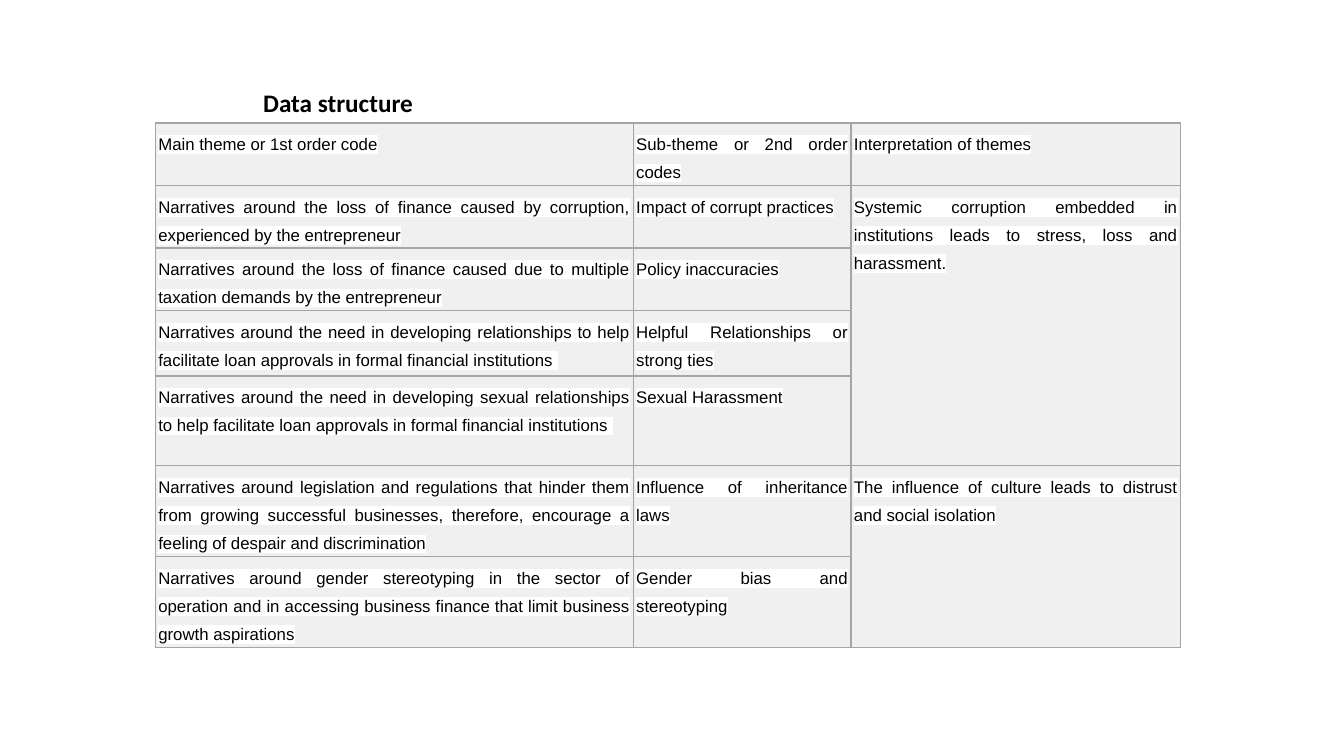
from lxml import etree
from pptx import Presentation
from pptx.dml.color import RGBColor
from pptx.enum.text import MSO_ANCHOR, MSO_AUTO_SIZE, PP_ALIGN
from pptx.oxml.ns import qn
from pptx.util import Inches, Pt

LEFT, JUSTIFY = PP_ALIGN.LEFT, PP_ALIGN.JUSTIFY
MIDDLE = MSO_ANCHOR.MIDDLE
NO_AUTOFIT = MSO_AUTO_SIZE.NONE

BLACK = RGBColor(0x00, 0x00, 0x00)
WHITE = RGBColor(0xFF, 0xFF, 0xFF)
CELL_GREY = RGBColor(0xF0, 0xF0, 0xF0)
BORDER_GREY = RGBColor(0xA5, 0xA5, 0xA5)

TITLE_ONLY = 5
TITLE_BOX = (2.51, 0.82, 9.38, 0.4)
TABLE_BOX = (1.54, 1.22, 10.17, 5.26)
COLUMN_WIDTHS = (4.74, 2.16, 3.27)
ROW_HEIGHTS = (0.52, 0.52, 0.52, 0.65, 0.89, 0.89, 0.77)
CELL_MARGIN = 0.03

THEMES = [
    ("Main theme or 1st order code",
     "Sub-theme or 2nd order codes",
     "Interpretation of themes"),
    ("Narratives around the loss of finance caused by corruption, "
     "experienced by the entrepreneur",
     "Impact of corrupt practices",
     "Systemic corruption embedded in institutions leads to stress, "
     "loss and harassment."),
    ("Narratives around the loss of finance caused due to multiple "
     "taxation demands by the entrepreneur",
     "Policy inaccuracies", None),
    ("Narratives around the need in developing relationships to help "
     "facilitate loan approvals in formal financial institutions ",
     "Helpful Relationships or strong ties", None),
    ("Narratives around the need in developing sexual relationships to help "
     "facilitate loan approvals in formal financial institutions ",
     "Sexual Harassment", None),
    ("Narratives around legislation and regulations that hinder them from "
     "growing successful businesses, therefore, encourage a feeling of "
     "despair and discrimination",
     "Influence of inheritance laws",
     "The influence of culture leads to distrust and social isolation"),
    ("Narratives around gender stereotyping in the sector of operation and "
     "in accessing business finance that limit business growth aspirations",
     "Gender bias and stereotyping", None),
]
INTERPRETATION_COLUMN = 2
MERGED_ROWS = [(1, 4), (5, 6)]


def set_font(para, name, size, bold=False):
    para.font.name = name
    para.font.size = Pt(size)
    para.font.bold = bold
    para.font.color.rgb = BLACK


def add_title(page, text):
    title = page.shapes.title
    title.left, title.top, title.width, title.height = map(Inches, TITLE_BOX)
    frame = title.text_frame
    frame.text = text
    frame.auto_size = NO_AUTOFIT
    frame.vertical_anchor = MIDDLE
    para = frame.paragraphs[0]
    para.alignment = LEFT
    set_font(para, "Calibri", 18, bold=True)


def add_color(parent, color):
    etree.SubElement(parent, qn("a:srgbClr"), val=str(color))


def set_borders(cell):
    properties = cell._tc.get_or_add_tcPr()
    for side in ("a:lnL", "a:lnR", "a:lnT", "a:lnB"):
        line = etree.SubElement(properties, qn(side), w=str(Pt(1)))
        add_color(etree.SubElement(line, qn("a:solidFill")), BORDER_GREY)


def highlight(span):
    properties = span._r.get_or_add_rPr()
    add_color(etree.SubElement(properties, qn("a:highlight")), WHITE)


def format_cell(cell):
    cell.margin_left = cell.margin_right = Inches(CELL_MARGIN)
    cell.margin_top = cell.margin_bottom = Inches(CELL_MARGIN)
    set_borders(cell)
    cell.fill.solid()
    cell.fill.fore_color.rgb = CELL_GREY


def write_cell(cell, text):
    para = cell.text_frame.paragraphs[0]
    para.alignment = JUSTIFY
    para.line_spacing = 1.5
    set_font(para, "Arial", 12)
    span = para.add_run()
    span.text = text
    highlight(span)


def add_theme_table(page):
    table = page.shapes.add_table(
        len(ROW_HEIGHTS), len(COLUMN_WIDTHS), *map(Inches, TABLE_BOX)).table
    table.first_row = table.horz_banding = False
    for column, width in zip(table.columns, COLUMN_WIDTHS):
        column.width = Inches(width)
    for row, height, texts in zip(table.rows, ROW_HEIGHTS, THEMES):
        row.height = Inches(height)
        for cell, text in zip(row.cells, texts):
            format_cell(cell)
            if text:
                write_cell(cell, text)
    for first, last in MERGED_ROWS:
        table.cell(first, INTERPRETATION_COLUMN).merge(
            table.cell(last, INTERPRETATION_COLUMN))


def main():
    deck = Presentation()
    deck.slide_width, deck.slide_height = Inches(13.33), Inches(7.5)
    page = deck.slides.add_slide(deck.slide_layouts[TITLE_ONLY])
    add_title(page, "Data structure")
    add_theme_table(page)
    deck.save("out.pptx")


if __name__ == "__main__":
    main()
